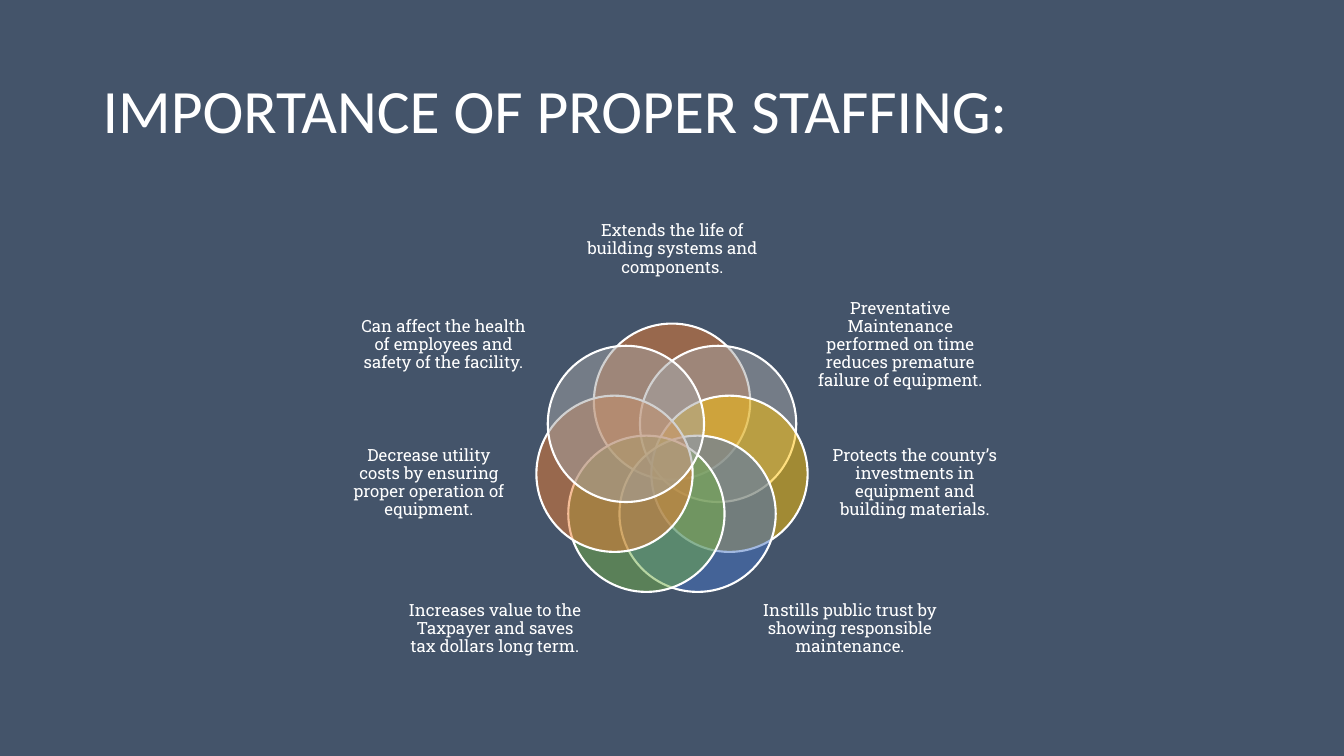
import math
from dataclasses import dataclass

import pptx
import pptx.dml.color
import pptx.enum.shapes
import pptx.enum.text
import pptx.oxml
import pptx.oxml.ns
import pptx.util
from pptx.util import Inches


@dataclass(frozen=True)
class Theme:
    background: str = "44546A"
    white: str = "FFFFFF"
    orange: str = "ED7D31"
    gray: str = "A5A5A5"
    gold: str = "FFC000"
    blue: str = "4472C4"
    green: str = "70AD47"
    title_font: str = "Calibri"
    label_font: str = "Roboto Slab"
    title_size: int = 44
    label_size: int = 12
    outline: float = 1.5
    opacity: int = 50


THEME = Theme()

# Ring of overlapping circles, in inches
RING_X, RING_Y = 6.665, 4.57
RING_RADIUS = 0.585
CIRCLE_SIZE = 1.55

# Clockwise from the top: circle colour, label box, label
REASONS = [
    (THEME.orange, (5.78, 2, 1.78, 0.95),
     "Extends the life of building systems and components."),
    (THEME.gray, (8.09, 2.9, 1.68, 1.05),
     "Preventative Maintenance performed on time reduces premature failure of equipment."),
    (THEME.gold, (8.25, 4.23, 1.65, 1.12),
     "Protects the county’s investments in equipment and building materials."),
    (THEME.blue, (7.54, 5.73, 1.78, 1.02),
     "Instills public trust by showing responsible maintenance."),
    (THEME.green, (4.02, 5.73, 1.78, 1.02),
     "Increases value to the Taxpayer and saves tax dollars long term."),
    (THEME.orange, (3.43, 4.23, 1.65, 1.12),
     "Decrease utility costs by ensuring proper operation of equipment."),
    (THEME.gray, (3.56, 2.9, 1.68, 1.05),
     "Can affect the health of employees and safety of the facility."),
]


def rgb(color):
    return pptx.dml.color.RGBColor.from_string(color)


def add_text(shapes, text, box, *, font, size, space_after, align="LEFT", insets=(0, 0)):
    text_box = shapes.add_textbox(*map(Inches, box))
    frame = text_box.text_frame
    frame.word_wrap = True
    frame.vertical_anchor = pptx.enum.text.MSO_ANCHOR.MIDDLE
    frame.margin_left = frame.margin_right = Inches(insets[0])
    frame.margin_top = frame.margin_bottom = Inches(insets[1])
    paragraph = frame.paragraphs[0]
    paragraph.alignment = pptx.enum.text.PP_ALIGN[align]
    paragraph.line_spacing = 0.9
    paragraph.space_after = pptx.util.Pt(space_after)
    run = paragraph.add_run()
    run.text = text
    run.font.name = font
    run.font.size = pptx.util.Pt(size)
    run.font.color.rgb = rgb(THEME.white)


def add_circle(shapes, position, color):
    """Place a translucent circle at its clockwise position on the ring."""
    angle = 2 * math.pi * position / len(REASONS)
    left = RING_X + RING_RADIUS * math.sin(angle) - CIRCLE_SIZE / 2
    top = RING_Y - RING_RADIUS * math.cos(angle) - CIRCLE_SIZE / 2
    circle = shapes.add_shape(
        pptx.enum.shapes.MSO_SHAPE.OVAL,
        Inches(left), Inches(top), Inches(CIRCLE_SIZE), Inches(CIRCLE_SIZE))
    circle.shadow.inherit = False
    circle.fill.solid()
    circle.fill.fore_color.rgb = rgb(color)
    circle.line.color.rgb = rgb(THEME.white)
    circle.line.width = pptx.util.Pt(THEME.outline)

    # Fill transparency
    fill_color = circle.fill._xPr.find(
        f"{pptx.oxml.ns.qn('a:solidFill')}/{pptx.oxml.ns.qn('a:srgbClr')}")
    alpha = pptx.oxml.parse_xml(
        f'<a:alpha {pptx.oxml.ns.nsdecls("a")} val="{THEME.opacity * 1000}"/>')
    fill_color.append(alpha)


def main():
    deck = pptx.Presentation()
    deck.slide_width, deck.slide_height = Inches(13.33), Inches(7.5)
    slide = deck.slides.add_slide(deck.slide_layouts[6])
    slide.background.fill.solid()
    slide.background.fill.fore_color.rgb = rgb(THEME.background)

    # Title
    add_text(slide.shapes, "IMPORTANCE OF PROPER STAFFING:", (0.92, 0.4, 11.5, 1.45),
             font=THEME.title_font, size=THEME.title_size, space_after=6,
             insets=(0.1, 0.05))

    # Venn diagram with its labels
    venn = slide.shapes.add_group_shape().shapes
    for position, (color, label_box, reason) in enumerate(REASONS):
        add_circle(venn, position, color)
        add_text(venn, reason, label_box, font=THEME.label_font,
                 size=THEME.label_size, space_after=4.2, align="CENTER")

    deck.save("out.pptx")


if __name__ == "__main__":
    main()
